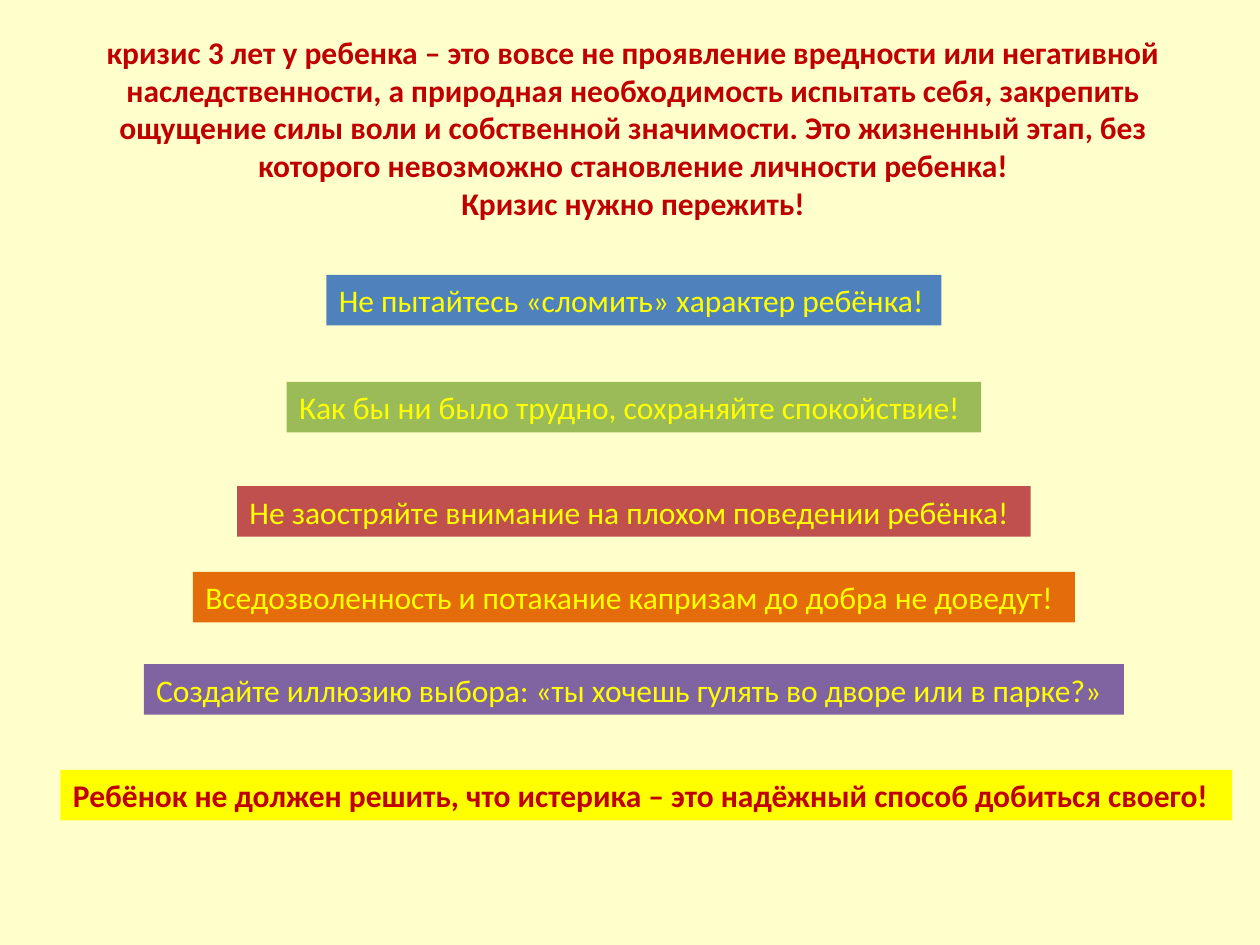
from dataclasses import dataclass

from pptx import Presentation
from pptx import util as u
from pptx.dml.color import RGBColor
from pptx.enum import shapes, text


@dataclass(frozen=True)
class Theme:
    font: str = "Calibri"
    size: int = 18
    background: str = "FFFFCC"
    accent: str = "C00000"
    advice: str = "FFFF00"
    blue: str = "4F81BD"
    green: str = "9BBB59"
    red: str = "C0504D"
    orange: str = "E46C0A"
    purple: str = "8064A2"
    yellow: str = "FFFF00"


class SlideBuilder:
    BAR_HEIGHT = 1.02

    def __init__(self, prs, theme):
        self.theme = theme
        self.s = prs.slides.add_slide(prs.slide_layouts[5])
        self.set_fill(self.s.background, theme.background)

    def set_fill(self, target, color):
        target.fill.solid()
        target.fill.fore_color.rgb = RGBColor.from_string(color)

    def set_text(self, tf, content, color, bold, align):
        tf.text = content
        tf.word_wrap = True
        tf.margin_left = tf.margin_right = u.Cm(0.25)
        tf.margin_top = tf.margin_bottom = u.Cm(0.13)
        tf.vertical_anchor = text.MSO_ANCHOR.TOP
        for p in tf.paragraphs:
            p.alignment = align
            for r in p.runs:
                r.font.name = self.theme.font
                r.font.size = u.Pt(self.theme.size)
                r.font.bold = bold
                r.font.color.rgb = RGBColor.from_string(color)

    def title(self, content, left, top, width, height):
        sp = self.s.shapes.title
        sp.left, sp.top = u.Cm(left), u.Cm(top)
        sp.width, sp.height = u.Cm(width), u.Cm(height)
        tf = sp.text_frame
        self.set_text(tf, content, self.theme.accent, True,
                      text.PP_ALIGN.CENTER)
        tf.auto_size = text.MSO_AUTO_SIZE.NONE

    def bar(self, content, top, width, fill, color, center=12.78, bold=False):
        """Add a one-line coloured bar centred on the given x position."""
        sp = self.s.shapes.add_shape(
            shapes.MSO_SHAPE.RECTANGLE, u.Cm(center - width / 2), u.Cm(top),
            u.Cm(width), u.Cm(self.BAR_HEIGHT))
        sp.shadow.inherit = False
        sp.line.fill.background()
        self.set_fill(sp, fill)
        tf = sp.text_frame
        self.set_text(tf, content, color, bold, text.PP_ALIGN.LEFT)
        tf.auto_size = text.MSO_AUTO_SIZE.SHAPE_TO_FIT_TEXT


def main():
    prs = Presentation()
    prs.slide_width, prs.slide_height = u.Cm(25.4), u.Cm(19.05)
    theme = Theme()
    slide = SlideBuilder(prs, theme)

    slide.title(
        "кризис 3 лет у ребенка – это вовсе не проявление вредности или "
        "негативной наследственности, а природная необходимость испытать "
        "себя, закрепить ощущение силы воли и собственной значимости. Это "
        "жизненный этап, без которого невозможно становление личности "
        "ребенка!\nКризис нужно пережить!",
        1.07, 0.53, 23.39, 4.09)

    advice = [
        ("Не пытайтесь «сломить» характер ребёнка!", 5.54, 12.4, theme.blue),
        ("Как бы ни было трудно, сохраняйте спокойствие!",
         7.7, 14, theme.green),
        ("Не заостряйте внимание на плохом поведении ребёнка!",
         9.8, 16, theme.red),
        ("Вседозволенность и потакание капризам до добра не доведут!",
         11.53, 17.78, theme.orange),
        ("Создайте иллюзию выбора: «ты хочешь гулять во дворе или в парке?»",
         13.39, 19.76, theme.purple),
    ]
    for content, top, width, fill in advice:
        slide.bar(content, top, width, fill, theme.advice)

    slide.bar("Ребёнок не должен решить, что истерика – это надёжный способ "
              "добиться своего!", 15.52, 23.62, theme.yellow, theme.accent,
              center=13.03, bold=True)

    prs.save("out.pptx")


if __name__ == "__main__":
    main()
